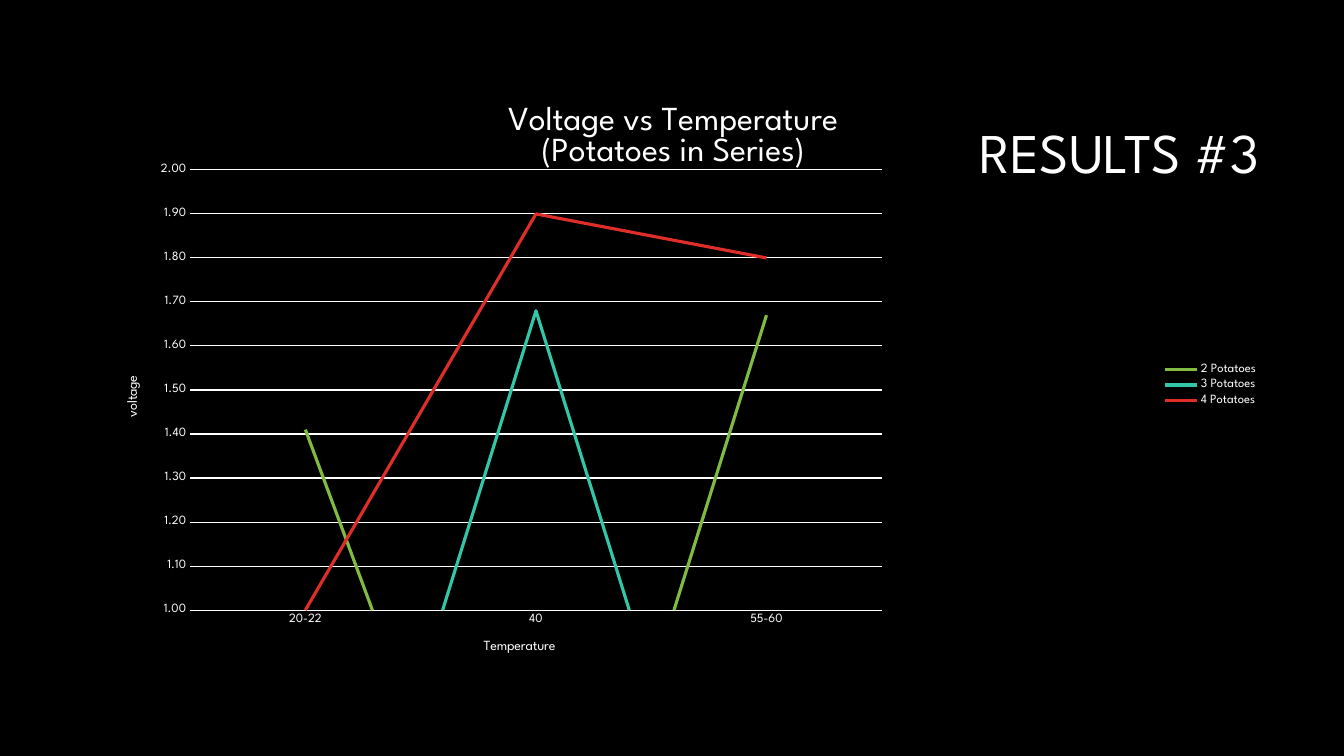
"""Builds the slide with the line chart of voltage against temperature."""
from lxml.etree import SubElement
from pptx import Presentation
from pptx.chart.data import CategoryChartData
from pptx.dml.color import RGBColor
from pptx.enum.chart import XL_CHART_TYPE as ChartType
from pptx.enum.chart import XL_LEGEND_POSITION as LegendPosition
from pptx.enum.chart import XL_MARKER_STYLE as MarkerStyle
from pptx.enum.chart import XL_TICK_MARK as TickMark
from pptx.enum.text import MSO_ANCHOR as Anchor
from pptx.enum.text import PP_ALIGN as Align
from pptx.oxml.ns import qn
from pptx.util import Pt

FONT = "League Spartan"
COLORS = {
    "background": "000000",
    "text": "FFFFFF",
    "2 Potatoes": "81BB42",
    "3 Potatoes": "32C7A9",
    "4 Potatoes": "DF2E28",
}
TEMPERATURES = ["20-22", "40", "55-60"]
VOLTAGES = {
    "2 Potatoes": (1.41, 0, 1.67),
    "3 Potatoes": (0, 1.68, 0),
    "4 Potatoes": (1, 1.9, 1.8),
}


def color(name):
    return RGBColor.from_string(COLORS[name])


def style_font(font, size):
    font.name = FONT
    font.size = Pt(size)
    font.bold = False
    font.color.rgb = color("text")


def style_line(line, name, width):
    line.color.rgb = color(name)
    line.width = Pt(width)


def place(element, **fractions):
    """Position a chart part by fractions of the chart's size."""
    layout = element.find(qn("c:layout"))
    if layout is None:
        layout = element.makeelement(qn("c:layout"))
        element.insert(0, layout)
    manual = SubElement(layout, qn("c:manualLayout"))
    if "w" in fractions:
        SubElement(manual, qn("c:layoutTarget"), val="inner")
    for side in "xy":
        SubElement(manual, qn(f"c:{side}Mode"), val="edge")
    for side, fraction in fractions.items():
        SubElement(manual, qn(f"c:{side}"), val=str(fraction))


def write_chart_text(title, text, size, x, y, rotation=0):
    frame = title.text_frame
    frame.text = text
    for para in frame.paragraphs:
        para.alignment = Align.CENTER
        style_font(para.font, size)
    element = title._element
    element.find(".//" + qn("a:bodyPr")).set("rot", str(rotation * 60000))
    place(element, x=x, y=y)


def add_heading(page, text):
    box = page.shapes.title
    box.left, box.top, box.width, box.height = Pt(228), Pt(60.5), Pt(678.5), Pt(101.5)
    frame = box.text_frame
    frame.word_wrap = True
    frame.vertical_anchor = Anchor.MIDDLE
    frame.text = text
    para = frame.paragraphs[0]
    para.alignment = Align.RIGHT
    para.line_spacing = 0.9
    style_font(para.font, 40)


def style_axes(chart):
    for axis in (chart.category_axis, chart.value_axis):
        axis.major_tick_mark = axis.minor_tick_mark = TickMark.NONE
        style_font(axis.tick_labels.font, 9)
    temperature, voltage = chart.category_axis, chart.value_axis
    style_line(temperature.format.line, "text", 0.75)
    write_chart_text(temperature.axis_title, "Temperature", 10, 0.34, 0.92)

    voltage.minimum_scale, voltage.maximum_scale, voltage.major_unit = 1, 2, 0.1
    voltage.tick_labels.number_format = "0.00"
    voltage.tick_labels.number_format_is_linked = False
    voltage.format.line.fill.background()
    voltage.has_major_gridlines = True
    style_line(voltage.major_gridlines.format.line, "text", 0.75)
    write_chart_text(voltage.axis_title, "voltage", 10, 0.04, 0.48, rotation=-90)


def add_voltage_chart(page):
    data = CategoryChartData(number_format="0.00")
    data.categories = TEMPERATURES
    for name, values in VOLTAGES.items():
        data.add_series(name, values)
    chart = page.shapes.add_chart(
        ChartType.LINE, Pt(54), Pt(60.5), Pt(852), Pt(429), data
    ).chart
    style_font(chart.font, 10)

    chart.has_title = True
    title = "Voltage vs Temperature\n(Potatoes in Series)"
    write_chart_text(chart.chart_title, title, 24, 0.36, 0.03)
    chart.has_legend = True
    chart.legend.position = LegendPosition.RIGHT
    chart.legend.include_in_layout = False
    style_font(chart.legend.font, 9)

    plot = chart.plots[0]
    plot.vary_by_categories = False
    for series in plot.series:
        series.smooth = False
        series.marker.style = MarkerStyle.NONE
        style_line(series.format.line, series.name, 2.25)
    style_axes(chart)
    plot_area = chart._chartSpace.find(".//" + qn("c:plotArea"))
    place(plot_area, x=0.096, y=0.142, w=0.58, h=0.733)


def main():
    deck = Presentation()
    deck.slide_width, deck.slide_height = Pt(960), Pt(540)
    page = deck.slides.add_slide(deck.slide_layouts[5])
    page.background.fill.solid()
    page.background.fill.fore_color.rgb = color("background")
    add_heading(page, "RESULTS #3")
    add_voltage_chart(page)
    deck.save("out.pptx")


if __name__ == "__main__":
    main()
